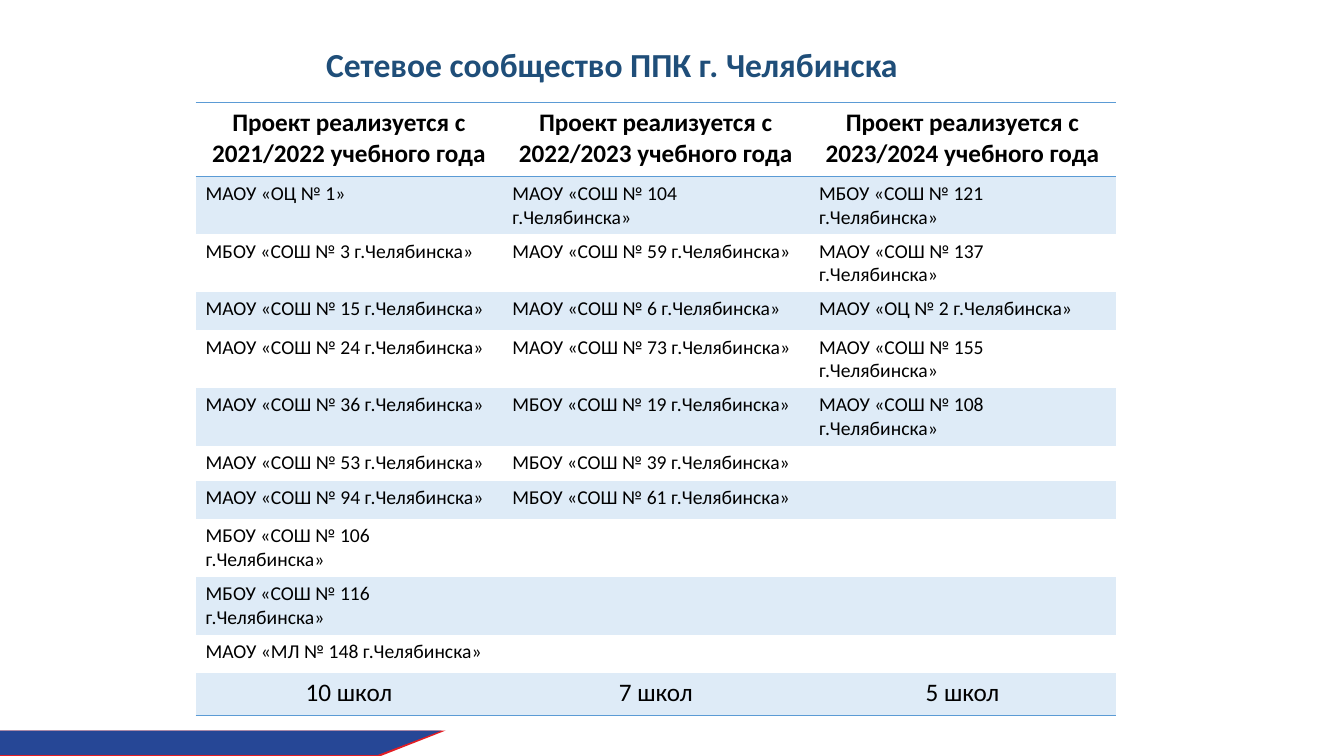
from lxml import etree
from pptx import Presentation
from pptx.dml.color import RGBColor
from pptx.enum.text import MSO_ANCHOR, PP_ALIGN
from pptx.oxml.ns import qn
from pptx.util import Cm, Pt

TITLE = "Сетевое сообщество ППК г. Челябинска"
YEARS = ["2021/2022", "2022/2023", "2023/2024"]
SCHOOLS = [
    [
        "МАОУ «ОЦ № 1»",
        "МБОУ «СОШ № 3 г.Челябинска»",
        "МАОУ «СОШ № 15 г.Челябинска»",
        "МАОУ «СОШ № 24 г.Челябинска»",
        "МАОУ «СОШ № 36 г.Челябинска»",
        "МАОУ «СОШ № 53 г.Челябинска»",
        "МАОУ «СОШ № 94 г.Челябинска»",
        "МБОУ «СОШ № 106 г.Челябинска»",
        "МБОУ «СОШ № 116 г.Челябинска»",
        "МАОУ «МЛ № 148 г.Челябинска»",
    ],
    [
        "МАОУ «СОШ № 104 г.Челябинска»",
        "МАОУ «СОШ № 59 г.Челябинска»",
        "МАОУ «СОШ № 6 г.Челябинска»",
        "МАОУ «СОШ № 73 г.Челябинска»",
        "МБОУ «СОШ № 19 г.Челябинска»",
        "МБОУ «СОШ № 39 г.Челябинска»",
        "МБОУ «СОШ № 61 г.Челябинска»",
    ],
    [
        "МБОУ «СОШ № 121 г.Челябинска»",
        "МАОУ «СОШ № 137 г.Челябинска»",
        "МАОУ «ОЦ № 2 г.Челябинска»",
        "МАОУ «СОШ № 155 г.Челябинска»",
        "МАОУ «СОШ № 108 г.Челябинска»",
    ],
]
ROW_HEIGHTS = [1.86, 1.02, 0.89, 0.96, 0.91, 0.91, 0.87, 0.97, 0.91, 0.96, 0.96, 1.08]

NAVY = RGBColor(0x1F, 0x4E, 0x79)
BLACK = RGBColor(0, 0, 0)
RULE_BLUE = RGBColor(0x5B, 0x9B, 0xD5)
BAND_BLUE = RGBColor(0xDE, 0xEB, 0xF7)
RED = RGBColor(0xE3, 0x1E, 0x24)
BLUE = RGBColor(0x26, 0x47, 0x96)
CENTER, LEFT = PP_ALIGN.CENTER, PP_ALIGN.LEFT
MIDDLE = MSO_ANCHOR.MIDDLE
PLAIN_STYLE = "{2D5ABB26-0587-4C30-8999-92F81FD0307C}"

SLIDE_WIDTH, SLIDE_HEIGHT = 33.87, 19.05
RIBBON_TOP = 18.41
RIBBONS = [(RED, 11.23, 9.6, SLIDE_HEIGHT), (BLUE, 11.13, 9.53, 19.02)]
COLUMN_WIDTH = 7.73


def write(frame, text, size=14, color=BLACK, bold=False, align=LEFT, spacing=None):
    paragraph = frame.paragraphs[0]
    paragraph.alignment = align
    paragraph.line_spacing = spacing
    if not text:
        paragraph._p.get_or_add_endParaRPr().set("sz", str(size * 100))
        return
    run = paragraph.add_run()
    run.text = text
    run.font.name = "Calibri"
    run.font.size = Pt(size)
    run.font.bold = bold
    run.font.color.rgb = color


def add_rules(cell, sides):
    properties = cell._tc.get_or_add_tcPr()
    for position, side in enumerate(sides):
        line = etree.Element(qn(f"a:{side}"), w=str(Pt(1)))
        fill = etree.SubElement(line, qn("a:solidFill"))
        etree.SubElement(fill, qn("a:srgbClr"), val=str(RULE_BLUE))
        properties.insert(position, line)


def add_ribbon(slide, color, top_right, bottom_right, bottom):
    builder = slide.shapes.build_freeform(0, Cm(RIBBON_TOP))
    builder.add_line_segments([
        (Cm(top_right), Cm(RIBBON_TOP)),
        (Cm(bottom_right), Cm(bottom)),
        (0, Cm(bottom)),
    ])
    ribbon = builder.convert_to_shape()
    ribbon.shadow.inherit = False
    ribbon.fill.solid()
    ribbon.fill.fore_color.rgb = color
    ribbon.line.fill.background()


def add_title(slide):
    title = slide.shapes.title
    title.left, title.top, title.width, title.height = Cm(1.02), Cm(0.79), Cm(28.8), Cm(1.8)
    title.text_frame.vertical_anchor = MIDDLE
    write(title.text_frame, TITLE, size=24, color=NAVY, bold=True, align=CENTER, spacing=0.9)


def add_schools(slide):
    last = len(ROW_HEIGHTS) - 1
    table = slide.shapes.add_table(
        len(ROW_HEIGHTS), len(YEARS), Cm(4.93), Cm(2.59),
        Cm(COLUMN_WIDTH * len(YEARS)), Cm(sum(ROW_HEIGHTS)),
    ).table
    table._tbl.tblPr.find(qn("a:tableStyleId")).text = PLAIN_STYLE
    for row, height in zip(table.rows, ROW_HEIGHTS):
        row.height = Cm(height)
    for column, (year, schools) in enumerate(zip(YEARS, SCHOOLS)):
        table.columns[column].width = Cm(COLUMN_WIDTH)
        gaps = [""] * (last - 1 - len(schools))
        heading = f"Проект реализуется с {year} учебного года"
        entries = [heading, *schools, *gaps, f"{len(schools)} школ"]
        for row, entry in enumerate(entries):
            cell = table.cell(row, column)
            edge = row in (0, last)
            write(cell.text_frame, entry, size=18 if edge else 14,
                  bold=row == 0, align=CENTER if edge else LEFT)
            if row % 2:
                cell.fill.solid()
                cell.fill.fore_color.rgb = BAND_BLUE
            else:
                cell.fill.background()
        add_rules(table.cell(0, column), ["lnT", "lnB"])
        add_rules(table.cell(last, column), ["lnB"])


def main():
    deck = Presentation()
    deck.slide_width, deck.slide_height = Cm(SLIDE_WIDTH), Cm(SLIDE_HEIGHT)
    slide = deck.slides.add_slide(deck.slide_layouts[5])
    for ribbon in RIBBONS:
        add_ribbon(slide, *ribbon)
    add_title(slide)
    add_schools(slide)
    deck.save("out.pptx")


if __name__ == "__main__":
    main()
